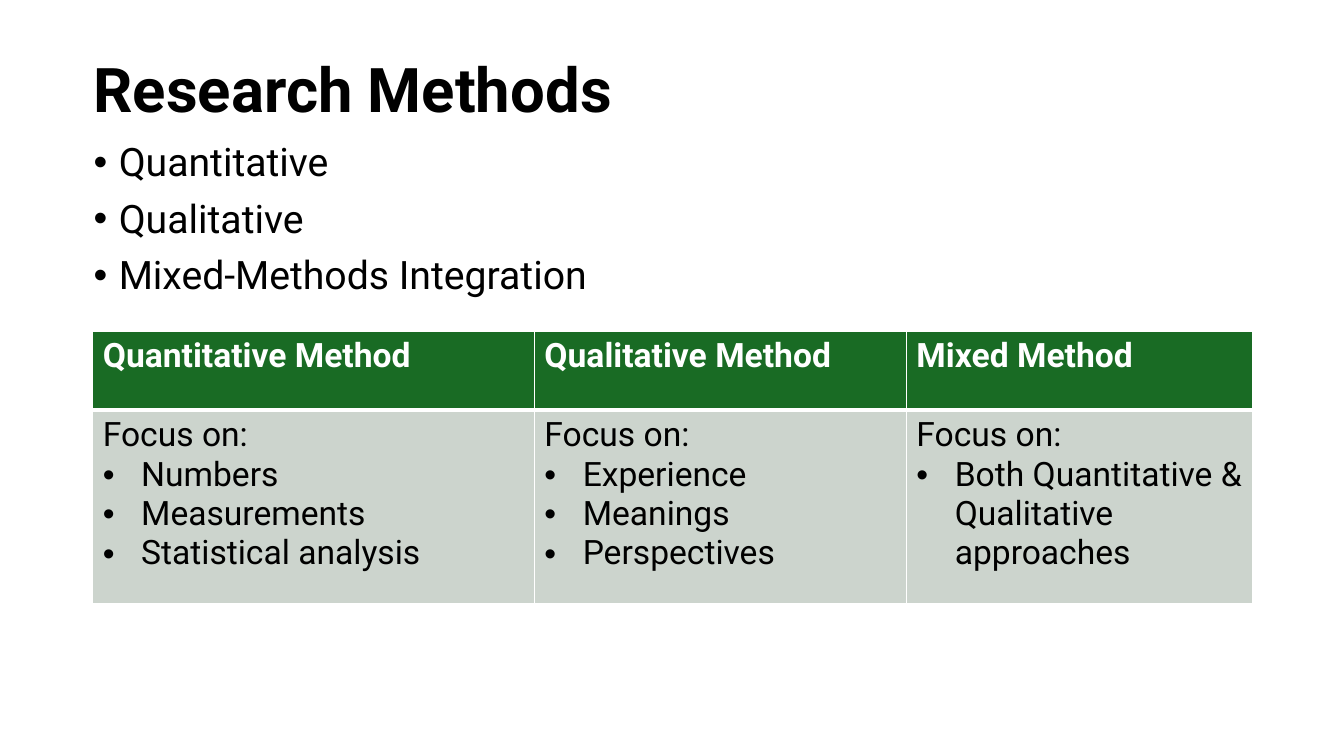
from lxml import etree
from pptx import Presentation
from pptx.dml.color import RGBColor
from pptx.enum.text import MSO_ANCHOR
from pptx.oxml.ns import qn
from pptx.util import Pt

MIDDLE = MSO_ANCHOR.MIDDLE
BLACK = RGBColor(0x00, 0x00, 0x00)
WHITE = RGBColor(0xFF, 0xFF, 0xFF)
GREEN = RGBColor(0x19, 0x6B, 0x24)
PALE_GREEN = RGBColor(0xCC, 0xD4, 0xCD)
FONT = "Roboto"
PX = 9144

TITLE = "Research Methods"
METHODS = ["Quantitative", "Qualitative", "Mixed-Methods Integration"]
COLUMNS = [
    (438, "Quantitative Method", ["Numbers", "Measurements", "Statistical analysis"]),
    (369, "Qualitative Method", ["Experience", "Meanings", "Perspectives"]),
    (343, "Mixed Method", ["Both Quantitative & Qualitative approaches"]),
]
ROW_HEIGHTS = [78, 192]


def style_text(paragraph, size, color, bold=False, indent=0):
    if indent:
        properties = paragraph._p.get_or_add_pPr()
        properties.set("marL", str(indent * PX))
        properties.set("indent", str(-indent * PX))
        etree.SubElement(properties, qn("a:buFont"), typeface="Arial")
        etree.SubElement(properties, qn("a:buChar"), char="•")
    for span in paragraph.runs:
        span.font.name = FONT
        span.font.size = Pt(size)
        span.font.bold = bold
        span.font.color.rgb = color


def paint_cell(cell, color, top, bottom):
    properties = cell._tc.get_or_add_tcPr()
    for side, width in (("lnL", 1), ("lnR", 1), ("lnT", top), ("lnB", bottom)):
        line = etree.SubElement(properties, qn(f"a:{side}"), w=str(Pt(width)))
        fill = etree.SubElement(line, qn("a:solidFill"))
        etree.SubElement(fill, qn("a:srgbClr"), val=str(WHITE))
    cell.fill.solid()
    cell.fill.fore_color.rgb = color


deck = Presentation()
deck.slide_width = 1333 * PX
deck.slide_height = 750 * PX
page = deck.slides.add_slide(deck.slide_layouts[6])

title_box = page.shapes.add_textbox(83 * PX, 19 * PX, 1150 * PX, 145 * PX)
title_frame = title_box.text_frame
title_frame.word_wrap = True
title_frame.vertical_anchor = MIDDLE
title_frame.text = TITLE
title_frame.paragraphs[0].line_spacing = 0.9
style_text(title_frame.paragraphs[0], 44, BLACK, bold=True)

methods_box = page.shapes.add_textbox(83 * PX, 137 * PX, 1150 * PX, 192 * PX)
methods_frame = methods_box.text_frame
methods_frame.word_wrap = True
methods_frame.text = "\n".join(METHODS)
for index, paragraph in enumerate(methods_frame.paragraphs):
    style_text(paragraph, 28, BLACK, indent=25)
    paragraph.line_spacing = 0.9
    if index:
        paragraph.space_before = Pt(10)

table_frame = page.shapes.add_table(
    len(ROW_HEIGHTS), len(COLUMNS), 92 * PX, 329 * PX, 1150 * PX, sum(ROW_HEIGHTS) * PX
)
table = table_frame.table
table.horz_banding = False
for row, height in zip(table.rows, ROW_HEIGHTS):
    row.height = height * PX

for index, (width, heading, points) in enumerate(COLUMNS):
    table.columns[index].width = width * PX
    header, body = table.cell(0, index), table.cell(1, index)
    paint_cell(header, GREEN, 1, 3)
    paint_cell(body, PALE_GREEN, 3, 1)
    header.text_frame.text = heading
    style_text(header.text_frame.paragraphs[0], 24, WHITE, bold=True)
    body.text_frame.text = "\n".join(["Focus on:", *points])
    for position, paragraph in enumerate(body.text_frame.paragraphs):
        style_text(paragraph, 24, BLACK, indent=38 if position else 0)

deck.save("out.pptx")
